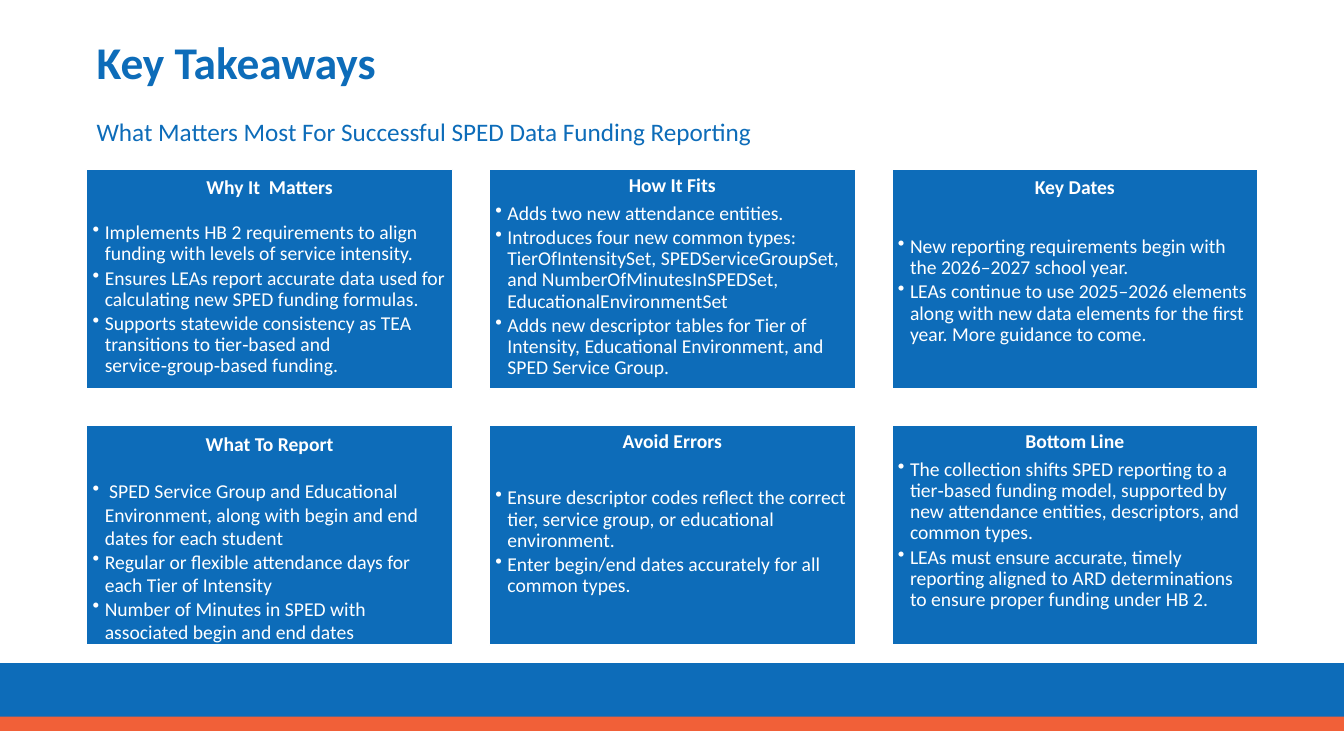
"""Build the Key Takeaways slide: a title, a grid of six cards and a footer."""
from dataclasses import dataclass

from lxml.etree import SubElement
from pptx import Presentation
from pptx.dml.color import RGBColor
from pptx.enum.shapes import MSO_SHAPE
from pptx.enum.text import MSO_ANCHOR, PP_ALIGN
from pptx.oxml.ns import qn
from pptx.util import Inches, Pt


@dataclass(frozen=True)
class Theme:
    """Colours, type sizes and grid measures."""
    blue: RGBColor = RGBColor(0x0D, 0x6C, 0xB9)
    coral: RGBColor = RGBColor(0xF1, 0x60, 0x38)
    white: RGBColor = RGBColor(0xFF, 0xFF, 0xFF)
    font: str = "Calibri"
    title: float = 32.4
    lead: float = 18
    body: float = 14
    left: float = 0.86
    top: float = 1.68
    wide: float = 3.63
    tall: float = 2.18
    step: float = 3.63 * 1.1
    drop: float = 2.54


@dataclass(frozen=True)
class Card:
    """Text of one card, with its gap under the heading and its line spacing."""
    head: str
    items: tuple
    gap: float
    lines: float = 0.9
    top: float = 0.9
    after: float = 2.1


CARDS = (
    Card("Why It  Matters", (
        "Implements HB 2 requirements to align funding with levels of service intensity.",
        "Ensures LEAs report accurate data used for calculating new SPED funding formulas.",
        "Supports statewide consistency as TEA transitions to tier‑based and "
        "service‑group‑based funding.",
    ), 17.1, top=1.0),
    Card("How It Fits", (
        "Adds two new attendance entities.",
        "Introduces four new common types: TierOfIntensitySet, SPEDServiceGroupSet, "
        "and NumberOfMinutesInSPEDSet, EducationalEnvironmentSet",
        "Adds new descriptor tables for Tier of Intensity, Educational Environment, "
        "and SPED Service Group.",
    ), 4.9),
    Card("Key Dates", (
        "New reporting requirements begin with the 2026–2027 school year.",
        "LEAs continue to use 2025–2026 elements along with new data elements for "
        "the first year. More guidance to come.",
    ), 26.9, top=1.0),
    Card("What To Report", (
        " SPED Service Group and Educational Environment, along with begin and end "
        "dates for each student",
        "Regular or flexible attendance days for each Tier of Intensity",
        "Number of Minutes in SPED with associated begin and end dates",
    ), 17.1, lines=1.0, top=1.0, after=0),
    Card("Avoid Errors", (
        "Ensure descriptor codes reflect the correct tier, service group, or "
        "educational environment.",
        "Enter begin/end dates accurately for all common types.",
    ), 25.2),
    Card("Bottom Line", (
        "The collection shifts SPED reporting to a tier‑based funding model, supported "
        "by new attendance entities, descriptors, and common types.",
        "LEAs must ensure accurate, timely reporting aligned to ARD determinations "
        "to ensure proper funding under HB 2.",
    ), 4.9),
)


class Deck:
    """Hold the theme and the current slide, and draw each kind of element."""

    def __init__(self, theme):
        self.theme = theme
        self.show = Presentation()
        self.show.slide_width = Inches(13.33)
        self.show.slide_height = Inches(7.5)
        self.slide = self.show.slides.add_slide(self.show.slide_layouts[6])

    def style(self, para, size, color, bold=False):
        """Set the font of a whole paragraph."""
        font = para.font
        font.name, font.size, font.bold = self.theme.font, Pt(size), bold
        font.color.rgb = color

    def rect(self, x, y, wide, tall, fill):
        """Draw a plain filled rectangle."""
        shape = self.slide.shapes.add_shape(
            MSO_SHAPE.RECTANGLE, Inches(x), Inches(y), Inches(wide), Inches(tall))
        shape.shadow.inherit = False
        shape.fill.solid()
        shape.fill.fore_color.rgb = fill
        shape.line.fill.background()
        return shape

    def band(self, top, tall, fill):
        """Draw a band across the slide, placed by shares of its height."""
        high = self.show.slide_height.inches
        self.rect(0, top * high, self.show.slide_width.inches, tall * high, fill)

    def label(self, text, y, wide, tall, size, bold=False):
        """Write one line of text at the left margin."""
        box = self.slide.shapes.add_textbox(
            Inches(self.theme.left), Inches(y), Inches(wide), Inches(tall))
        frame = box.text_frame
        frame.word_wrap = True
        frame.vertical_anchor = MSO_ANCHOR.MIDDLE
        para = frame.paragraphs[0]
        para.text = text
        self.style(para, size, self.theme.blue, bold)

    def bullet(self, frame, text, card):
        """Add one bulleted paragraph with a hanging indent."""
        para = frame.add_paragraph()
        para.text = text
        para.alignment = PP_ALIGN.LEFT
        para.line_spacing = card.lines
        para.space_after = Pt(card.after)
        props = para._p.get_or_add_pPr()
        props.set("marL", str(Inches(0.12)))
        props.set("indent", str(Inches(-0.12)))
        SubElement(props, qn("a:buChar")).set("char", "•")
        self.style(para, self.theme.body, self.theme.white)

    def card(self, col, row, card):
        """Draw a card in a grid cell."""
        look = self.theme
        shape = self.rect(look.left + col * look.step, look.top + row * look.drop,
                          look.wide, look.tall, look.blue)
        shape.line.color.rgb = look.white
        shape.line.width = Pt(1)
        frame = shape.text_frame
        frame.word_wrap = True
        frame.vertical_anchor = MSO_ANCHOR.TOP
        frame.margin_left = frame.margin_right = Inches(0.06)
        frame.margin_top = frame.margin_bottom = Inches(0.06)
        head = frame.paragraphs[0]
        head.text = card.head
        head.alignment = PP_ALIGN.CENTER
        head.line_spacing = card.top
        head.space_after = Pt(card.gap)
        self.style(head, look.body, look.white, True)
        for item in card.items:
            self.bullet(frame, item, card)


def main():
    """Draw the slide and save it."""
    theme = Theme()
    deck = Deck(theme)
    deck.band(0.877, 0.077, theme.blue)
    deck.band(0.948, 0.019, theme.coral)
    deck.label("Key Takeaways", 0.2, 12.16, 0.82, theme.title, True)
    for spot, card in enumerate(CARDS):
        row, col = divmod(spot, 3)
        deck.card(col, row, card)
    deck.label("What Matters Most For Successful SPED Data Funding Reporting",
               1.1, 8.64, 0.4, theme.lead)
    deck.show.save("out.pptx")


if __name__ == "__main__":
    main()
